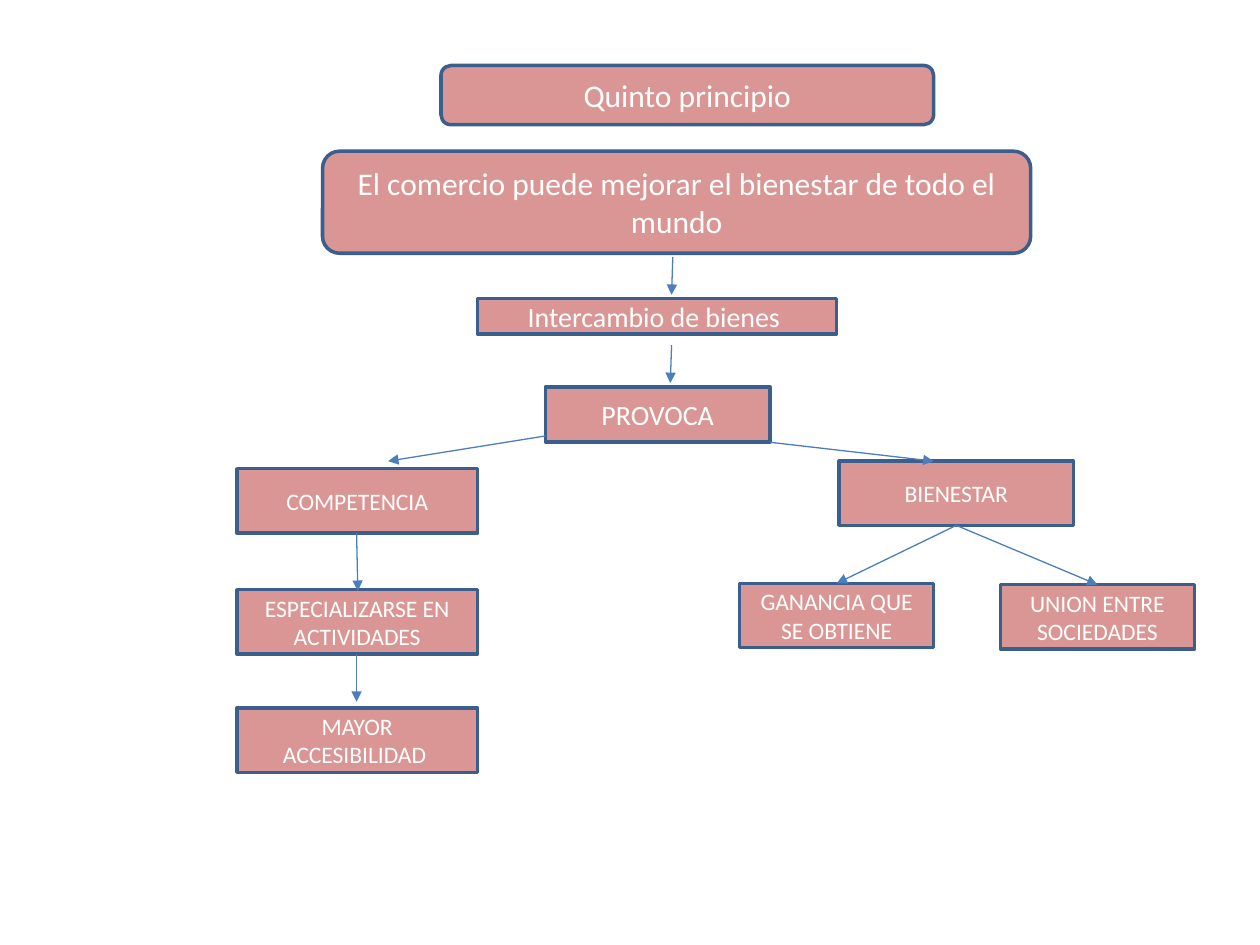
from typing import NamedTuple

from lxml import etree
from pptx import Presentation
from pptx.dml.color import RGBColor
from pptx.enum.shapes import MSO_CONNECTOR, MSO_SHAPE
from pptx.enum.text import MSO_ANCHOR, PP_ALIGN
from pptx.oxml.ns import qn
from pptx.util import Emu, Pt

RECTANGLE = MSO_SHAPE.RECTANGLE
ROUNDED = MSO_SHAPE.ROUNDED_RECTANGLE
STRAIGHT = MSO_CONNECTOR.STRAIGHT
MIDDLE = MSO_ANCHOR.MIDDLE
CENTER = PP_ALIGN.CENTER

EMU_PER_PX = 9144  # 100 px to the inch
FONT = "Calibri"
BOX_FILL = "D99694"
BOX_BORDER = "3A5F8C"
ARROW_COLOR = "4B7EBC"
TEXT_COLOR = "FFFFFF"

TITLE_SIZE = 18
STEP_SIZE = 16
DETAIL_SIZE = 13.5
DETAIL_HEIGHT = 51
LEFT_X, LEFT_WIDTH = 188, 191
BENEFIT_WIDTH = 154


class Box(NamedTuple):
    text: str
    left: int
    top: int
    width: int
    height: int = DETAIL_HEIGHT
    size: float = DETAIL_SIZE
    kind: MSO_SHAPE = RECTANGLE


class Arrow(NamedTuple):
    start_x: int
    start_y: int
    end_x: int
    end_y: int


BOXES = [
    # Heading and main chain
    Box("Quinto principio", 350, 52, 391, 47, TITLE_SIZE, ROUNDED),
    Box("El comercio puede mejorar el bienestar de todo el mundo",
        256, 120, 562, 81, TITLE_SIZE, ROUNDED),
    Box("Intercambio de bienes ", 379, 237, 285, 28, STEP_SIZE),
    Box("PROVOCA", 433, 307, 178, 44, STEP_SIZE),
    # Competition branch
    Box("COMPETENCIA", LEFT_X, 372, LEFT_WIDTH),
    Box("ESPECIALIZARSE EN ACTIVIDADES", LEFT_X, 468, LEFT_WIDTH),
    Box("MAYOR ACCESIBILIDAD ", LEFT_X, 562, LEFT_WIDTH),
    # Welfare branch
    Box("BIENESTAR", 666, 366, 186),
    Box("GANANCIA QUE SE OBTIENE", 587, 463, BENEFIT_WIDTH),
    Box("UNION ENTRE SOCIEDADES", 794, 464, BENEFIT_WIDTH),
]

ARROWS = [
    # Main chain
    Arrow(534, 204, 533, 234),
    Arrow(533, 274, 532, 304),
    # Competition branch
    Arrow(433, 346, 308, 366),
    Arrow(283, 423, 284, 469),
    Arrow(283, 519, 283, 557),
    # Welfare branch
    Arrow(611, 351, 741, 366),
    Arrow(759, 417, 664, 463),
    Arrow(759, 417, 871, 464),
]


def px(length: int) -> Emu:
    return Emu(length * EMU_PER_PX)


def color(hex_value: str) -> RGBColor:
    return RGBColor.from_string(hex_value)


def draw_box(slide, box: Box) -> None:
    shape = slide.shapes.add_shape(
        box.kind, px(box.left), px(box.top), px(box.width), px(box.height))
    shape.shadow.inherit = False
    shape.fill.solid()
    shape.fill.fore_color.rgb = color(BOX_FILL)
    shape.line.color.rgb = color(BOX_BORDER)
    shape.line.width = Pt(2)
    text_frame = shape.text_frame
    text_frame.word_wrap = True
    text_frame.vertical_anchor = MIDDLE
    text_frame.text = box.text
    paragraph = text_frame.paragraphs[0]
    paragraph.alignment = CENTER
    font = paragraph.runs[0].font
    font.name = FONT
    font.size = Pt(box.size)
    font.color.rgb = color(TEXT_COLOR)


def draw_arrow(slide, arrow: Arrow) -> None:
    connector = slide.shapes.add_connector(
        STRAIGHT, *(px(coordinate) for coordinate in arrow))
    connector.line.color.rgb = color(ARROW_COLOR)
    connector.line.width = Pt(0.75)
    line = connector.line._get_or_add_ln()
    etree.SubElement(line, qn("a:tailEnd")).set("type", "triangle")
    etree.SubElement(connector._element.spPr, qn("a:effectLst"))


def main() -> None:
    presentation = Presentation()
    presentation.slide_width = px(1000)
    presentation.slide_height = px(750)
    slide = presentation.slides.add_slide(presentation.slide_layouts[6])
    for box in BOXES:
        draw_box(slide, box)
    for arrow in ARROWS:
        draw_arrow(slide, arrow)
    presentation.save("out.pptx")


if __name__ == "__main__":
    main()
